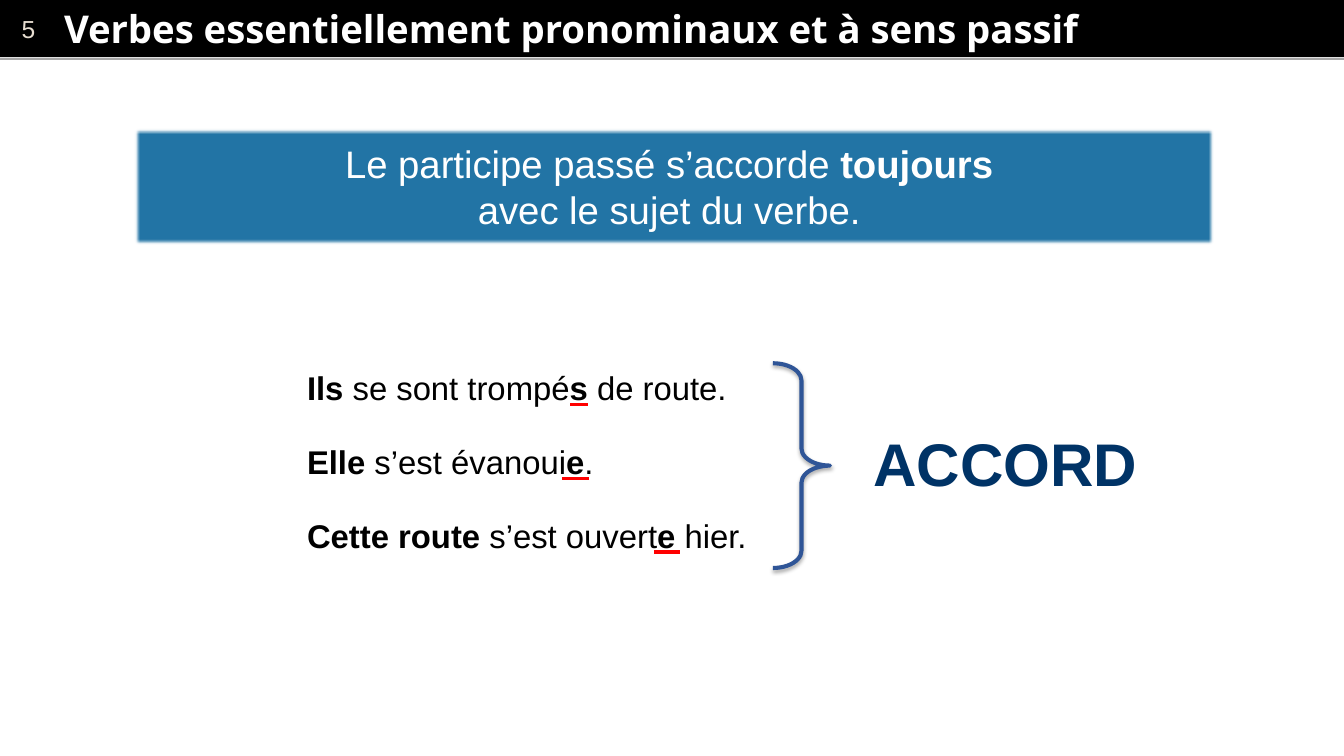
from dataclasses import dataclass

from lxml.etree import SubElement
from pptx import Presentation
from pptx.dml.color import RGBColor
from pptx.enum.shapes import MSO_CONNECTOR as Connector, MSO_SHAPE as Shape
from pptx.enum.text import MSO_ANCHOR as Anchor, MSO_AUTO_SIZE as AutoSize, PP_ALIGN as Align
from pptx.oxml.ns import qn
from pptx.util import Emu, Pt

PX = 9144
COLORS = {
    "black": "000000", "white": "FFFFFF", "beige": "E7DED1", "grey": "A6A6A6",
    "blue": "2274A5", "brace": "2F5597", "navy": "003366", "red": "FF0000",
}
Run = tuple[str, bool]


@dataclass(frozen=True)
class Box:
    left: int
    top: int
    width: int
    height: int

    def emu(self) -> list[Emu]:
        return [px(n) for n in (self.left, self.top, self.width, self.height)]


@dataclass(frozen=True)
class Example:
    runs: list[Run]
    width: int
    mark_left: int
    mark_right: int


def px(n: int) -> Emu:
    return Emu(n * PX)


def color(name: str) -> RGBColor:
    return RGBColor.from_string(COLORS[name])


def write(shape, lines: list[list[Run]], size: int, ink: str, font: str = "Arial",
          align: Align = Align.LEFT, wrap: bool = False) -> None:
    frame = shape.text_frame
    frame.word_wrap = wrap
    frame.auto_size = AutoSize.NONE
    frame.vertical_anchor = Anchor.MIDDLE
    for i, runs in enumerate(lines):
        paragraph = frame.add_paragraph() if i else frame.paragraphs[0]
        paragraph.alignment = align
        paragraph.font.name = font
        paragraph.font.size = Pt(size)
        paragraph.font.color.rgb = color(ink)
        for text, bold in runs:
            run = paragraph.add_run()
            run.text = text
            run.font.bold = bold


def add_panel(slide, box: Box, fill: str):
    panel = slide.shapes.add_shape(Shape.RECTANGLE, *box.emu())
    panel.shadow.inherit = False
    panel.fill.solid()
    panel.fill.fore_color.rgb = color(fill)
    panel.line.fill.background()
    return panel


def add_text(slide, box: Box, runs: list[Run], size: int, ink: str) -> None:
    write(slide.shapes.add_textbox(*box.emu()), [runs], size, ink)


def add_rule(slide, left: int, right: int, y: int, ink: str, weight: float) -> None:
    rule = slide.shapes.add_connector(Connector.STRAIGHT, px(left), px(y), px(right), px(y))
    rule.line.color.rgb = color(ink)
    rule.line.width = Pt(weight)
    SubElement(rule._element.spPr, qn("a:effectLst"))


def add_effect(shape, tag: str, **attributes: str):
    effects = shape._element.spPr.find(qn("a:effectLst"))
    return SubElement(effects, qn(tag), attributes)


def add_header(slide, number: str, heading: str) -> None:
    bar = add_panel(slide, Box(0, 0, 1365, 58), "black")
    bar.text_frame.margin_left = px(22)
    write(bar, [[(number, False)]], 18, "beige")
    add_rule(slide, 0, 1365, 60, "grey", 2)

    title = slide.shapes.title
    title.left, title.top, title.width, title.height = Box(61, 1, 1285, 56).emu()
    frame = title.text_frame
    frame.margin_left = frame.margin_right = frame.margin_top = frame.margin_bottom = px(4)
    write(title, [[(heading, True)]], 28, "white", "Open Sans", wrap=True)
    slide.shapes._spTree.append(title._element)


def add_principle(slide) -> None:
    panel = add_panel(slide, Box(137, 131, 1096, 117), "blue")
    add_effect(panel, "a:softEdge", rad="31750")
    write(panel, [
        [("Le participe passé s’accorde ", False), ("toujours ", True)],
        [("avec le sujet du verbe. ", False)],
    ], 28, "white", align=Align.CENTER)


def add_examples(slide, examples: list[Example]) -> None:
    for row, example in enumerate(examples):
        top = 369 + 75 * row
        add_text(slide, Box(302, top, example.width, 50), example.runs, 24, "black")
        add_rule(slide, example.mark_left, example.mark_right, top + 42, "red", 2.75)


def add_brace(slide) -> None:
    brace = slide.shapes.add_shape(Shape.RIGHT_BRACE, *Box(785, 369, 58, 208).emu())
    brace.adjustments[0] = 0.3
    brace.adjustments[1] = 0.5
    brace.fill.background()
    brace.line.color.rgb = color("brace")
    brace.line.width = Pt(3)
    brace.shadow.inherit = False
    shadow = add_effect(brace, "a:outerShdw", blurRad="40000", dist="23000",
                        dir="5400000", rotWithShape="0")
    tint = SubElement(shadow, qn("a:srgbClr"), val=COLORS["black"])
    SubElement(tint, qn("a:alpha"), val="35000")


def main() -> None:
    deck = Presentation()
    deck.slide_width, deck.slide_height = px(1365), px(768)
    slide = deck.slides.add_slide(deck.slide_layouts[5])
    add_header(slide, "5", "Verbes essentiellement pronominaux et à sens passif")
    add_principle(slide)
    add_examples(slide, [
        Example([("Ils", True), (" se sont trompé", False), ("s", True),
                 (" de route.", False)], 450, 579, 597),
        Example([("Elle", True), (" s’est évanoui", False), ("e", True),
                 (".", False)], 314, 571, 598),
        Example([("Cette route", True), (" s’est ouvert", False), ("e ", True),
                 ("hier.", False)], 480, 664, 691),
    ])
    add_brace(slide)
    add_text(slide, Box(877, 436, 250, 67), [("ACCORD", True)], 44, "navy")
    deck.save("out.pptx")


if __name__ == "__main__":
    main()
